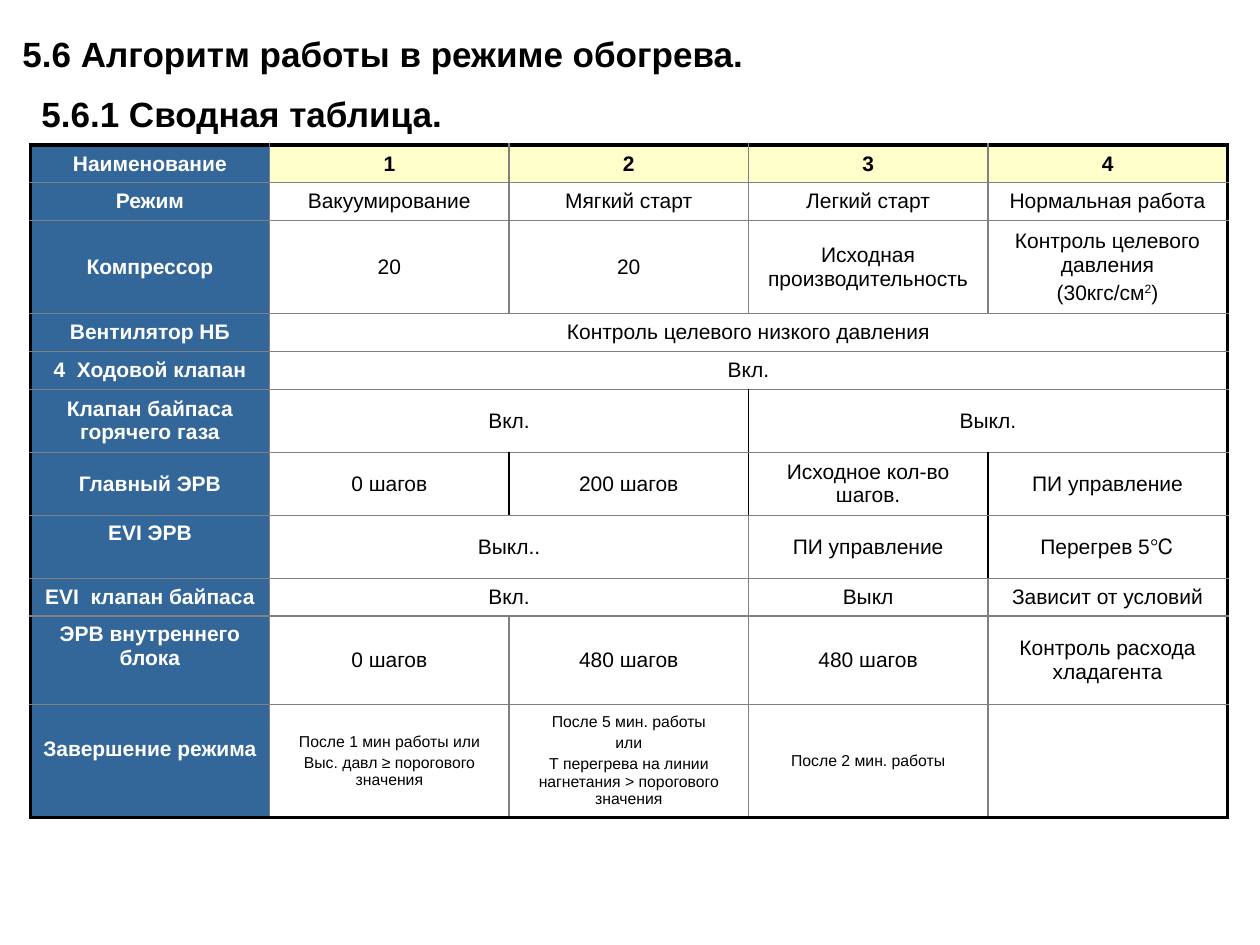
from pptx import Presentation
from pptx.dml.color import RGBColor
from pptx.enum.text import MSO_ANCHOR as Anchor, PP_ALIGN as Align
from pptx.oxml import parse_xml
from pptx.oxml.ns import nsdecls
from pptx.util import Inches, Pt

COLORS = {"label": "336699", "header": "FFFFCC", "body": "FFFFFF",
          "white": "FFFFFF", "text": "000000", "grid": "808080", "frame": "000000"}
FONT = "Arial"
COLUMNS = 5
TITLES = ["5.6 Алгоритм работы в режиме обогрева.", "5.6.1 Сводная таблица."]
ROWS = [
    (0.3, ["Наименование", "1", "2", "3", "4"]),
    (0.3, ["Режим", "Вакуумирование", "Мягкий старт", "Легкий старт", "Нормальная работа"]),
    (0.74, ["Компрессор", "20", "20", "Исходная производительность",
            "Контроль целевого давления\n(30кгс/см^2^)"]),
    (0.3, ["Вентилятор НБ", "Контроль целевого низкого давления", None, None, None]),
    (0.3, ["4  Ходовой клапан", "Вкл.", None, None, None]),
    (0.5, ["Клапан байпаса горячего газа", "Вкл.", None, "Выкл.", None]),
    (0.5, ["Главный ЭРВ", "0 шагов", "200 шагов", "Исходное кол-во шагов.", "ПИ управление"]),
    (0.5, ["EVI ЭРВ", "Выкл..", None, "ПИ управление", "Перегрев 5℃"]),
    (0.3, ["EVI  клапан байпаса", "Вкл.", None, "Выкл", "Зависит от условий"]),
    (0.7, ["ЭРВ внутреннего блока", "0 шагов", "480 шагов", "480 шагов",
           "Контроль расхода хладагента"]),
    (0.9, ["Завершение режима",
           "После 1 мин работы или\nВыс. давл ≥ порогового значения",
           "После 5 мин. работы\nили\nТ перегрева на линии нагнетания > порогового значения",
           "После 2 мин. работы", ""]),
]
LAST_ROW = len(ROWS) - 1
TOP_LABEL_ROWS = (7, 9)
BLACK_DIVIDERS = {(5, 3), (6, 2), (6, 3), (6, 4), (7, 4)}


def style_font(font, size, color, bold):
    """Apply typeface, size, colour and weight."""
    font.name, font.size, font.bold = FONT, Pt(size), bold
    font.color.rgb = RGBColor.from_string(COLORS[color])


def add_titles(slide):
    """Add the section and subsection headings."""
    box = slide.shapes.add_textbox(Inches(0.08), Inches(0.21), Inches(9.49), Inches(0.93))
    box.text_frame.word_wrap = True
    box.text_frame.text = "\n".join(TITLES)
    heading, subheading = box.text_frame.paragraphs
    subheading.space_before = Pt(10)
    subheading._p.get_or_add_pPr().set("marL", str(Inches(0.15)))
    for paragraph in (heading, subheading):
        style_font(paragraph.runs[0].font, 20, "text", True)


def write_cell(cell, text, size, color, bold):
    """Write centred paragraphs, raising the parts between carets."""
    cell.text_frame.text = text.replace("^", "")
    for index, line in enumerate(text.split("\n")):
        paragraph = cell.text_frame.paragraphs[index]
        paragraph.alignment = Align.CENTER
        style_font(paragraph.font, size, color, bold)
        if index:
            paragraph.space_before = Pt(size * 0.2)
        if not line:
            continue
        parts = line.split("^")
        paragraph.runs[0].text = parts[0]
        for part in parts[1:]:
            paragraph.add_run().text = part
        for position, run in enumerate(paragraph.runs):
            style_font(run.font, size, color, bold)
            if position % 2:
                run.font._element.set("baseline", "30000")


def add_border(cell, side, color, width):
    """Draw one side of a cell."""
    cell._tc.get_or_add_tcPr().append(parse_xml(
        f'<a:ln{side} {nsdecls("a")} w="{Pt(width)}"><a:solidFill>'
        f'<a:srgbClr val="{COLORS[color]}"/></a:solidFill></a:ln{side}>'))


def add_borders(cell, row, left, right):
    """Frame the table's outside heavily and its inside thinly."""
    edges = {"L": (left == 0, (row, left)), "R": (right == COLUMNS, (row, right)),
             "T": (row == 0, None), "B": (row == LAST_ROW, None)}
    for side, (outer, divider) in edges.items():
        dark = outer or divider in BLACK_DIVIDERS
        add_border(cell, side, "frame" if dark else "grid", 2.25 if outer else 1)


def fill_cell(table, row, column, texts):
    """Merge, write and style one cell."""
    cell = table.cell(row, column)
    right = column + 1
    while right < COLUMNS and texts[right] is None:
        right += 1
    if right > column + 1:
        cell.merge(table.cell(row, right - 1))
    is_label, is_header = column == 0, row == 0
    size = 9 if row == LAST_ROW and not is_label else 12
    write_cell(cell, texts[column], size, "white" if is_label else "text",
               is_label or is_header)
    cell.vertical_anchor = Anchor.MIDDLE
    if is_label and row in TOP_LABEL_ROWS:
        cell.vertical_anchor = Anchor.TOP
    if is_label and row == LAST_ROW:
        cell.margin_bottom = Inches(0.24)
    add_borders(cell, row, column, right)
    cell.fill.solid()
    fill = "label" if is_label else "header" if is_header else "body"
    cell.fill.fore_color.rgb = RGBColor.from_string(COLORS[fill])


def add_summary_table(slide):
    """Add the table of heating stages."""
    height = sum(row_height for row_height, _ in ROWS)
    table = slide.shapes.add_table(len(ROWS), COLUMNS, Inches(0.24), Inches(1.15),
                                   Inches(9.5), Inches(height)).table
    table.first_row = table.horz_banding = False
    for row, (row_height, texts) in enumerate(ROWS):
        table.rows[row].height = Inches(row_height)
        for column, text in enumerate(texts):
            if text is not None:
                fill_cell(table, row, column, texts)


def main():
    """Build and save the slide."""
    presentation = Presentation()
    presentation.slide_width, presentation.slide_height = Inches(10), Inches(7.5)
    slide = presentation.slides.add_slide(presentation.slide_layouts[6])
    add_summary_table(slide)
    add_titles(slide)
    presentation.save("out.pptx")


if __name__ == "__main__":
    main()
